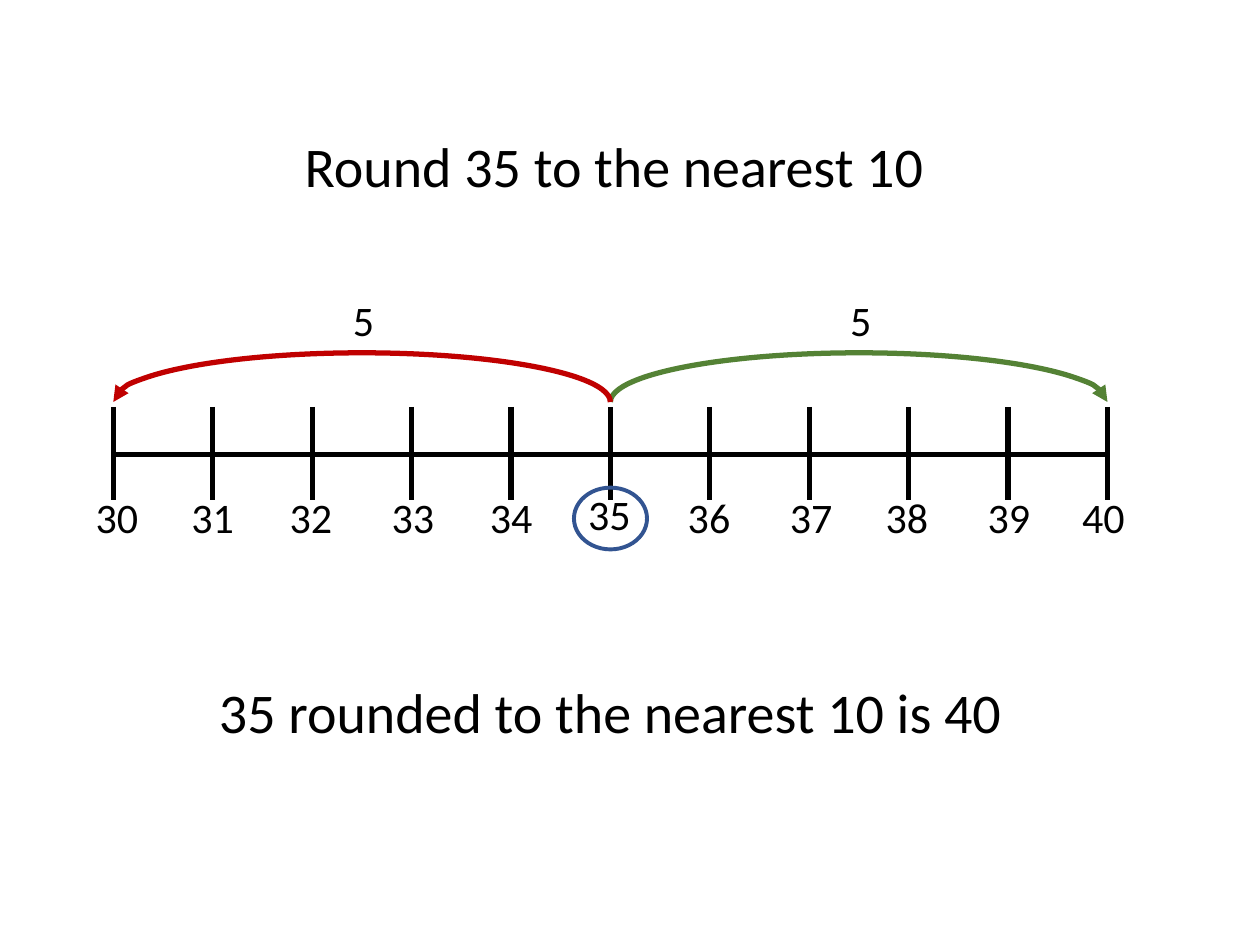
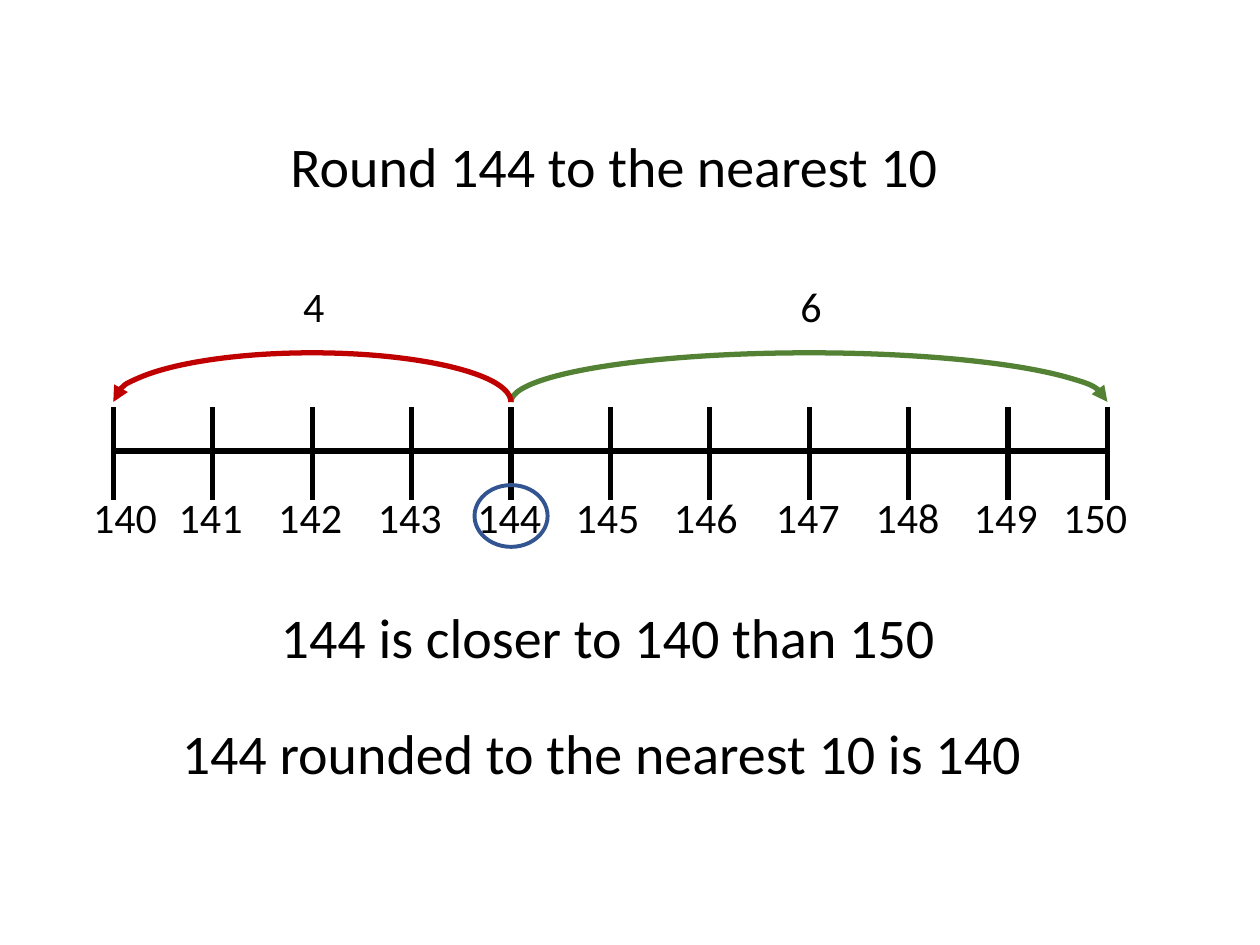
import dataclasses
import typing

import pptx
import pptx.dml.color
import pptx.enum.shapes
import pptx.enum.text
import pptx.oxml.ns
import pptx.util
from lxml import etree

Inches = pptx.util.Inches
Shape = pptx.enum.shapes.MSO_SHAPE
Align = pptx.enum.text.PP_ALIGN
Fit = pptx.enum.text.MSO_AUTO_SIZE


@dataclasses.dataclass(frozen=True)
class Theme:
    font: str = "Calibri"
    ink: str = "000000"
    ring: str = "325491"
    down: str = "C00000"
    up: str = "548235"
    large: int = 32
    small: int = 24
    thick: float = 3
    thin: float = 2.25


@dataclasses.dataclass(frozen=True)
class Note:
    text: str
    left: float
    top: float
    width: float


@dataclasses.dataclass(frozen=True)
class Task:
    value: int
    start: int
    lefts: tuple[float, ...]
    axis: float
    ring: float
    hop: float
    notes: tuple[Note, ...]
    drop: float = 0


THEME = Theme()
STEPS = 10
LEFT, RIGHT = 0.9, 8.79
TOP, BASE = 3.23, 3.97
ARC_TOP, ARC_HIGH = 2.8, 0.39
RING_WIDE, RING_HIGH = 0.58, 0.49
LABEL_TOP, LABEL_WIDE, LABEL_HIGH = 3.85, 0.89, 0.5
HOP_SHIFT = 0.17
NOTE_HIGH = 0.64

TASKS = (
    Task(35, 30,
         (0.66, 1.42, 2.2, 3.01, 3.79, 4.57, 5.36, 6.17, 6.93, 7.74, 8.49),
         axis=3.61, ring=3.87, hop=2.29, drop=0.02,
         notes=(Note("35 rounded to the nearest 10 is 40", 0.73, 5.33, 8.23),)),
    Task(144, 140,
         (0.64, 1.32, 2.11, 2.9, 3.69, 4.47, 5.25, 6.06, 6.85, 7.63, 8.34),
         axis=3.58, ring=3.85, hop=2.18,
         notes=(Note("144 is closer to 140 than 150", 0.45, 4.73, 8.75),
                Note("144 rounded to the nearest 10 is 140", 0.4, 5.65, 8.75))),
)


def color(code: str) -> pptx.dml.color.RGBColor:
    return pptx.dml.color.RGBColor.from_string(code)


def place(shape: typing.Any, left: float, top: float, width: float, height: float) -> None:
    shape.left, shape.top = Inches(left), Inches(top)
    shape.width, shape.height = Inches(width), Inches(height)


def write(shape: typing.Any, text: str, *, size: int = THEME.small,
          align: Align = Align.LEFT, fit: Fit = Fit.SHAPE_TO_FIT_TEXT) -> None:
    frame = shape.text_frame
    frame.word_wrap = True
    frame.auto_size = fit
    frame.vertical_anchor = pptx.enum.text.MSO_ANCHOR.TOP
    line = frame.paragraphs[0]
    line.alignment = align
    run = line.add_run()
    run.text = text
    run.font.name = THEME.font
    run.font.size = pptx.util.Pt(size)
    run.font.color.rgb = color(THEME.ink)


def label(slide: typing.Any, text: str, left: float, top: float,
          width: float = LABEL_WIDE, height: float = LABEL_HIGH, **form: typing.Any) -> None:
    box = slide.shapes.add_textbox(Inches(left), Inches(top), Inches(width), Inches(height))
    write(box, text, **form)


def outline(slide: typing.Any, kind: Shape, left: float, top: float, width: float,
            height: float, code: str, weight: float) -> typing.Any:
    shape = slide.shapes.add_shape(kind, Inches(left), Inches(top), Inches(width), Inches(height))
    shape.shadow.inherit = False
    shape.fill.background()
    shape.line.color.rgb = color(code)
    shape.line.width = pptx.util.Pt(weight)
    return shape


def rule(group: typing.Any, x1: float, y1: float, x2: float, y2: float) -> None:
    line = group.shapes.add_connector(pptx.enum.shapes.MSO_CONNECTOR.STRAIGHT,
                                      Inches(x1), Inches(y1), Inches(x2), Inches(y2))
    line.line.color.rgb = color(THEME.ink)
    line.line.width = pptx.util.Pt(THEME.thick)
    etree.SubElement(line._element.spPr, pptx.oxml.ns.qn("a:effectLst"))


def tick(step: int) -> float:
    return LEFT + step * (RIGHT - LEFT) / STEPS


def scale(slide: typing.Any, axis: float) -> None:
    group = slide.shapes.add_group_shape()
    rule(group, LEFT, axis, RIGHT, axis)
    for step in range(STEPS + 1):
        rule(group, tick(step), TOP, tick(step), BASE)


def arc(slide: typing.Any, first: int, last: int, top: float) -> None:
    low, high = sorted((tick(first), tick(last)))
    span, mid = high - low, (low + high) / 2
    back = last < first
    shape = outline(slide, Shape.RIGHT_BRACKET, mid - ARC_HIGH / 2,
                    ARC_TOP + ARC_HIGH / 2 - span / 2, ARC_HIGH, span,
                    THEME.down if back else THEME.up, THEME.thick)
    shape.adjustments[0] = span / ARC_HIGH / 2
    shape.rotation = 90 if back else 270
    if back:
        shape._element.spPr.xfrm.set("flipH", "1")
    etree.SubElement(shape.line._get_or_add_ln(), pptx.oxml.ns.qn("a:tailEnd"), type="triangle")
    label(slide, str(abs(last - first)), mid - HOP_SHIFT, top)


def build(deck: typing.Any, task: Task) -> None:
    slide = deck.slides.add_slide(deck.slide_layouts[5])
    title = slide.shapes.title
    place(title, 0.5, 0.99, 8.75, NOTE_HIGH)
    write(title, f"Round {task.value} to the nearest 10",
          size=THEME.large, align=Align.CENTER, fit=Fit.NONE)
    scale(slide, task.axis)
    spot = task.value - task.start
    for step, left in enumerate(task.lefts):
        lift = task.drop if step == spot else 0
        label(slide, str(task.start + step), left, LABEL_TOP - lift)
    for note in task.notes:
        label(slide, note.text, note.left, note.top, note.width, NOTE_HIGH,
              size=THEME.large, align=Align.CENTER)
    arc(slide, spot, STEPS, task.hop)
    arc(slide, spot, 0, task.hop)
    outline(slide, Shape.OVAL, tick(spot) - RING_WIDE / 2, task.ring,
            RING_WIDE, RING_HIGH, THEME.ring, THEME.thin)


def main() -> None:
    deck = pptx.Presentation()
    deck.slide_width, deck.slide_height = Inches(10), Inches(7.5)
    for task in TASKS:
        build(deck, task)
    deck.save("out.pptx")


if __name__ == "__main__":
    main()
